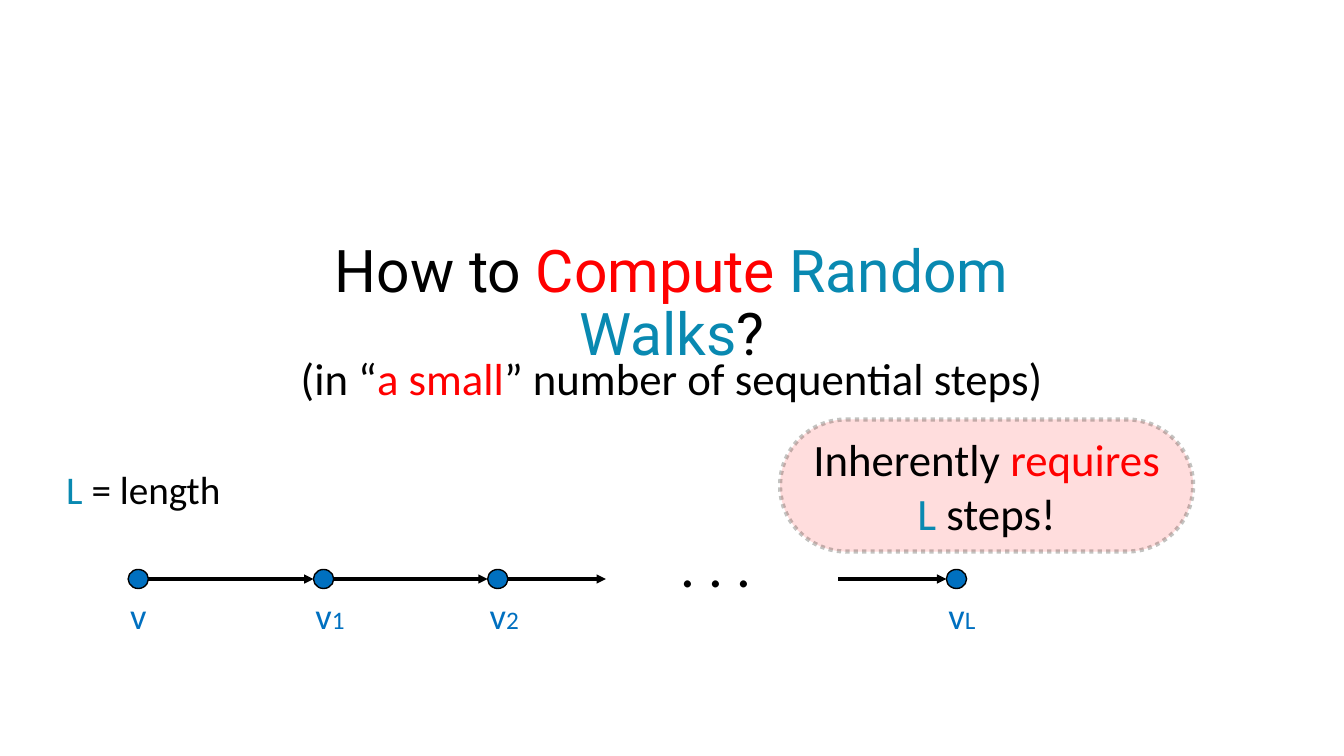
from lxml import etree
from pptx import Presentation
from pptx.dml.color import RGBColor
from pptx.enum.dml import MSO_LINE
from pptx.enum.shapes import MSO_CONNECTOR, MSO_SHAPE
from pptx.enum.text import MSO_ANCHOR, MSO_AUTO_SIZE, PP_ALIGN
from pptx.oxml.ns import qn
from pptx.util import Cm, Pt

CENTER, LEFT = PP_ALIGN.CENTER, PP_ALIGN.LEFT
MIDDLE, TOP = MSO_ANCHOR.MIDDLE, MSO_ANCHOR.TOP
NO_FIT, GROW = MSO_AUTO_SIZE.NONE, MSO_AUTO_SIZE.SHAPE_TO_FIT_TEXT
OVAL, TERMINATOR = MSO_SHAPE.OVAL, MSO_SHAPE.FLOWCHART_TERMINATOR
STRAIGHT, DOTTED = MSO_CONNECTOR.STRAIGHT, MSO_LINE.ROUND_DOT

COLORS = {"black": "000000", "red": "FF0000", "teal": "0989B1",
          "blue": "0070C0", "pink": "FFDDDD", "border": "1B1810"}

# Content: runs are (text, color, size)
TITLE = [("How to ", "black", 42), ("Compute ", "red", 42),
         ("Random Walks", "teal", 42), ("?", "black", 42)]
TEXTS = [  # box in cm, wraps, alignment, runs
    ((5.87, 8.71, 22.12, 1.63), True, CENTER,
     [("(in “", "black", 32), ("a small", "red", 32),
      ("” number of sequential steps)", "black", 32)]),
    ((1.42, 11.61, 4.45, 1.45), False, LEFT,
     [("L", "teal", 28), (" = length", "black", 28)]),
    ((16.89, 13.21, 2.34, 2.06), False, LEFT, [(". . .", "black", 42)]),
]
CALLOUT = [("Inherently ", "black", 32), ("requires ", "red", 32),
           ("L", "teal", 32), (" steps!", "black", 32)]
NODES = [(3.23, ""), (7.9, "1"), (12.29, "2"), (23.85, "L")]  # left, index

# Walk geometry in cm
NODE_WIDTH, NODE_HEIGHT = 0.51, 0.48
NODE_TOP, LABEL_TOP = 14.35, 14.83
AXIS = NODE_TOP + NODE_HEIGHT / 2
LABEL_SHIFT, LABEL_HEIGHT = -0.2, 1.37
GAP_START, GAP_END = 15.27, 21.13


def rgb(name):
    return RGBColor.from_string(COLORS[name])


def lengths(box):
    return [Cm(value) for value in box]


def write(shape, runs, font="Calibri", align=LEFT, spacing=None, **frame_format):
    frame = shape.text_frame
    settings = {"word_wrap": True, "auto_size": GROW, "vertical_anchor": TOP}
    for name, value in (settings | frame_format).items():
        setattr(frame, name, value)
    paragraph = frame.paragraphs[0]
    paragraph.alignment = align
    paragraph.line_spacing = spacing
    for text, color, size in runs:
        run = paragraph.add_run()
        run.text = text
        run.font.name = font
        run.font.size = Pt(size)
        run.font.color.rgb = rgb(color)


def add_filled(slide, kind, box, fill, line, width):
    shape = slide.shapes.add_shape(kind, *lengths(box))
    shape.shadow.inherit = False
    shape.fill.solid()
    shape.fill.fore_color.rgb = rgb(fill)
    shape.line.color.rgb = rgb(line)
    shape.line.width = Pt(width)
    return shape


def add_arrow(slide, start, end):
    arrow = slide.shapes.add_connector(STRAIGHT, *lengths((start, AXIS, end, AXIS)))
    arrow.line.color.rgb = rgb("black")
    arrow.line.width = Pt(2.25)
    etree.SubElement(arrow.line._get_or_add_ln(), qn("a:tailEnd"), type="triangle")
    etree.SubElement(arrow._element.spPr, qn("a:effectLst"))


presentation = Presentation()
presentation.slide_width, presentation.slide_height = Cm(33.87), Cm(19.05)
slide = presentation.slides.add_slide(presentation.slide_layouts[5])

# Title
title = slide.shapes.title
title.left, title.top, title.width, title.height = lengths((5.87, 5.84, 22.12, 3.68))
write(title, TITLE, "Roboto", CENTER, 0.9, auto_size=NO_FIT, vertical_anchor=MIDDLE)

# Subtitle, legend and ellipsis
for box, wraps, align, runs in TEXTS:
    write(slide.shapes.add_textbox(*lengths(box)), runs, align=align, word_wrap=wraps)

# Walk nodes with their labels
for left, index in NODES:
    add_filled(slide, OVAL, (left, NODE_TOP, NODE_WIDTH, NODE_HEIGHT), "blue", "black", 1)
    label_width = 1.8 if index else 1.17
    label = slide.shapes.add_textbox(
        *lengths((left + LABEL_SHIFT, LABEL_TOP, label_width, LABEL_HEIGHT)))
    runs = [("v", "blue", 26)] + ([(index, "blue", 18)] if index else [])
    write(label, runs)

# Arrows, broken by the ellipsis before the last node
lefts = [left for left, index in NODES]
starts = [left + NODE_WIDTH for left in lefts[:-1]] + [GAP_END]
ends = lefts[1:-1] + [GAP_START, lefts[-1]]
for start, end in zip(starts, ends):
    add_arrow(slide, start, end)

# Callout with a faint dotted border
callout = add_filled(slide, TERMINATOR, (19.66, 10.57, 10.41, 3.33), "pink", "border", 3)
callout.line.dash_style = DOTTED
border_color = callout.line._get_or_add_ln().find(".//" + qn("a:srgbClr"))
etree.SubElement(border_color, qn("a:alpha"), val="25000")
write(callout, CALLOUT, align=CENTER, auto_size=NO_FIT, vertical_anchor=MIDDLE)

presentation.save("out.pptx")
